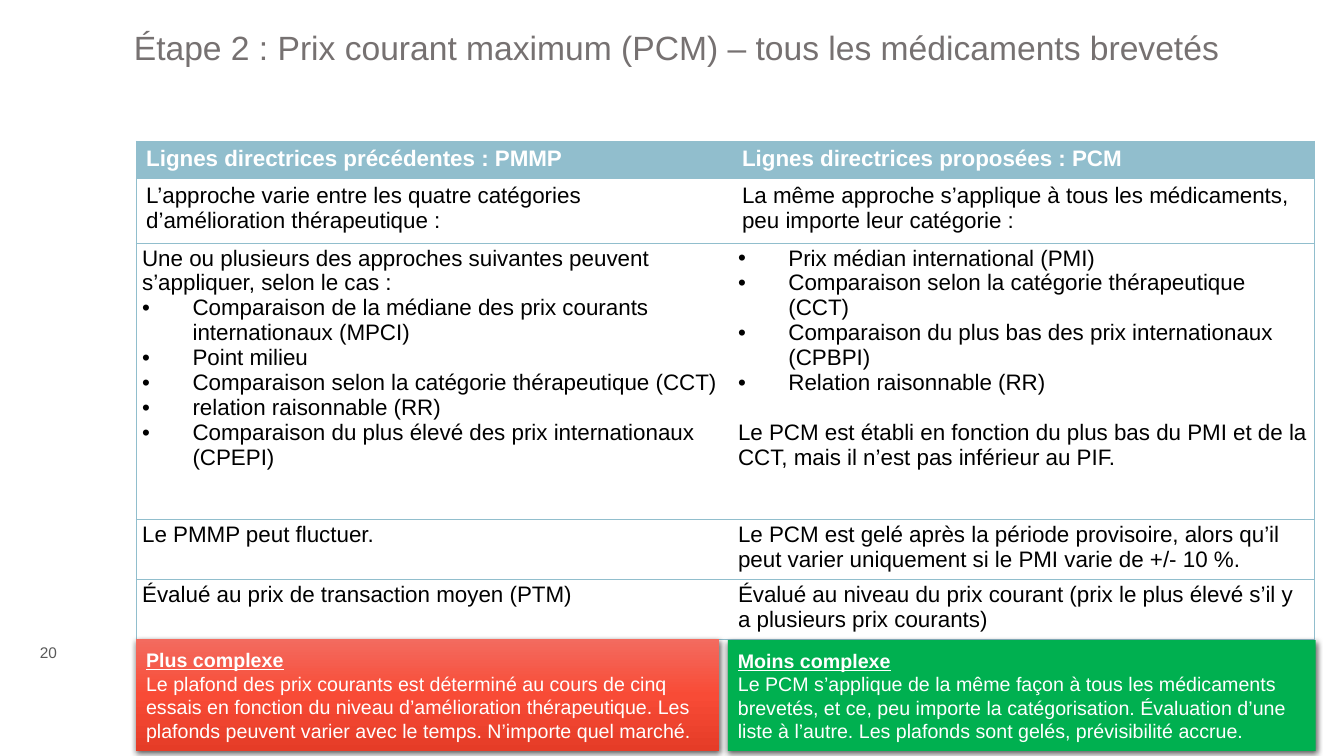
import copy
import pptx
import pptx.dml.color
import pptx.enum.shapes
import pptx.enum.text
import pptx.oxml
import pptx.oxml.ns
import pptx.util
from dataclasses import dataclass

NS = pptx.oxml.ns.nsdecls("a")
qn = pptx.oxml.ns.qn
ANCHOR = pptx.enum.text.MSO_ANCHOR
ALIGN = pptx.enum.text.PP_ALIGN


@dataclass(frozen=True)
class Theme:
    font: str = "Arial"
    title: str = "767171"
    number: str = "595959"
    ink: str = "000000"
    white: str = "FFFFFF"
    blue: str = "91BECD"
    green: str = "00B050"
    reds: tuple = ("F36B5F", "F84B36", "E53C27")
    title_size: int = 24
    table_size: int = 16
    box_size: int = 14
    number_size: int = 11
    border: float = 0.5


def px(n):
    return pptx.util.Emu(n * 9144)


def rgb(value):
    return pptx.dml.color.RGBColor.from_string(value)


class Deck:
    def __init__(self, theme):
        self.theme = theme
        self.prs = pptx.Presentation()
        self.prs.slide_width, self.prs.slide_height = px(1333), px(750)
        self.s = self.prs.slides.add_slide(self.prs.slide_layouts[6])

    def run(self, p, text, size, color, bold=False, underline=False):
        r = p.add_run()
        r.text = text
        r.font.name = self.theme.font
        r.font.size = pptx.util.Pt(size)
        r.font.color.rgb = rgb(color)
        r.font.bold = bold
        r.font.underline = underline

    def bullet(self, p):
        pPr = p._p.get_or_add_pPr()
        pPr.set("marL", str(px(50)))
        pPr.set("indent", str(px(-50)))
        pPr.append(pptx.oxml.parse_xml(f'<a:buFont {NS} typeface="Arial"/>'))
        pPr.append(pptx.oxml.parse_xml(f'<a:buChar {NS} char="•"/>'))

    def text(self, at, text, size, color, anchor, align=ALIGN.LEFT, top=5, spacing=1.0):
        tf = self.s.shapes.add_textbox(*map(px, at)).text_frame
        tf.word_wrap = True
        tf.vertical_anchor = anchor
        tf.margin_top = px(top)
        p = tf.paragraphs[0]
        p.alignment = align
        p.line_spacing = spacing
        self.run(p, text, size, color)

    def borders(self, cell, visible):
        tcPr = cell._tc.get_or_add_tcPr()
        for i, side in enumerate("LRTB"):
            paint = (f'<a:solidFill><a:srgbClr val="{self.theme.blue}"/></a:solidFill>'
                     if side in visible else "<a:noFill/>")
            width = pptx.util.Pt(self.theme.border)
            tcPr.insert(i, pptx.oxml.parse_xml(
                f'<a:ln{side} {NS} w="{width}">{paint}</a:ln{side}>'))

    def cell(self, cell, paragraphs, header, tight):
        t = self.theme
        cell.fill.solid()
        cell.fill.fore_color.rgb = rgb(t.blue if header else t.white)
        side, edge = (6, 3) if tight else (10, 5)
        cell.margin_left = cell.margin_right = px(side)
        cell.margin_top = cell.margin_bottom = px(edge)
        after_bullet = False
        for i, text in enumerate(paragraphs):
            p = cell.text_frame.paragraphs[0] if i == 0 else cell.text_frame.add_paragraph()
            is_bullet = text.startswith("•")
            if after_bullet and not is_bullet:
                p.space_before = pptx.util.Pt(18)
            if is_bullet:
                self.bullet(p)
            after_bullet = is_bullet
            self.run(p, text.removeprefix("•"), t.table_size,
                     t.white if header else t.ink, bold=header)

    def table(self, left, top, widths, heights, rows):
        table = self.s.shapes.add_table(
            len(rows), len(widths), px(left), px(top),
            px(sum(widths)), px(sum(heights))).table
        table.horz_banding = False
        for column, width in zip(table.columns, widths):
            column.width = px(width)
        for i, (row, height) in enumerate(zip(rows, heights)):
            table.rows[i].height = px(height)
            for j, paragraphs in enumerate(row):
                cell = table.cell(i, j)
                self.cell(cell, paragraphs, header=i == 0, tight=i > 1)
                self.borders(cell, "TB" + "LR"[j])

    def gradient(self, sp, colors):
        sp.fill.gradient()
        sp.fill.gradient_angle = 270
        stops = sp._element.spPr.find(qn("a:gradFill")).find(qn("a:gsLst"))
        stops.insert(1, copy.deepcopy(stops[0]))
        for i, (stop, color) in enumerate(zip(sp.fill.gradient_stops, colors)):
            stop.position = i / (len(colors) - 1)
            stop.color.rgb = rgb(color)

    def box(self, at, fill, heading, body):
        t = self.theme
        sp = self.s.shapes.add_shape(
            pptx.enum.shapes.MSO_SHAPE.RECTANGLE, *map(px, at))
        if isinstance(fill, tuple):
            self.gradient(sp, fill)
        else:
            sp.fill.solid()
            sp.fill.fore_color.rgb = rgb(fill)
        sp.line.fill.background()
        sp.shadow.inherit = False
        blur, dist = pptx.util.Pt(4.5), pptx.util.Pt(1.5)
        sp._element.spPr.find(qn("a:effectLst")).append(pptx.oxml.parse_xml(
            f'<a:outerShdw {NS} blurRad="{blur}" dist="{dist}" dir="5400000" rotWithShape="0">'
            '<a:srgbClr val="000000"><a:alpha val="63000"/></a:srgbClr></a:outerShdw>'))
        tf = sp.text_frame
        tf.word_wrap = True
        tf.vertical_anchor = ANCHOR.MIDDLE
        for p, text, strong in ((tf.paragraphs[0], heading, True),
                                (tf.add_paragraph(), body, False)):
            p.alignment = ALIGN.LEFT
            self.run(p, text, t.box_size, t.white, bold=strong, underline=strong)


ROWS = [
    (["Lignes directrices précédentes : PMMP"],
     ["Lignes directrices proposées : PCM"]),
    (["L’approche varie entre les quatre catégories d’amélioration thérapeutique :"],
     ["La même approche s’applique à tous les médicaments, peu importe leur catégorie :"]),
    (["Une ou plusieurs des approches suivantes peuvent s’appliquer, selon le cas :",
      "•Comparaison de la médiane des prix courants internationaux (MPCI)",
      "•Point milieu",
      "•Comparaison selon la catégorie thérapeutique (CCT)",
      "•relation raisonnable (RR)",
      "•Comparaison du plus élevé des prix internationaux (CPEPI)"],
     ["•Prix médian international (PMI)",
      "•Comparaison selon la catégorie thérapeutique (CCT)",
      "•Comparaison du plus bas des prix internationaux (CPBPI)",
      "•Relation raisonnable (RR)",
      "Le PCM est établi en fonction du plus bas du PMI et de la CCT, "
      "mais il n’est pas inférieur au PIF."]),
    (["Le PMMP peut fluctuer."],
     ["Le PCM est gelé après la période provisoire, alors qu’il peut varier "
      "uniquement si le PMI varie de +/- 10 %."]),
    (["Évalué au prix de transaction moyen (PTM)"],
     ["Évalué au niveau du prix courant (prix le plus élevé s’il y a "
      "plusieurs prix courants)"]),
]


def main():
    t = Theme()
    deck = Deck(t)
    deck.text((123, 21, 1150, 96),
              "Étape 2 : Prix courant maximum (PCM) – tous les médicaments brevetés",
              t.title_size, t.title, ANCHOR.TOP, top=10, spacing=0.9)
    deck.table(135, 140, (591, 578), (37, 64, 274, 60, 59), ROWS)
    deck.box((135, 634, 578, 111), t.reds, "Plus complexe",
             "Le plafond des prix courants est déterminé au cours de cinq essais en "
             "fonction du niveau d’amélioration thérapeutique. Les plafonds peuvent "
             "varier avec le temps. N’importe quel marché.")
    deck.box((722, 635, 583, 110), t.green, "Moins complexe",
             "Le PCM s’applique de la même façon à tous les médicaments brevetés, et ce, "
             "peu importe la catégorisation. Évaluation d’une liste à l’autre. "
             "Les plafonds sont gelés, prévisibilité accrue.")
    deck.text((7, 627, 82, 40), "20", t.number_size, t.number,
              ANCHOR.MIDDLE, ALIGN.CENTER)
    deck.prs.save("out.pptx")


if __name__ == "__main__":
    main()
